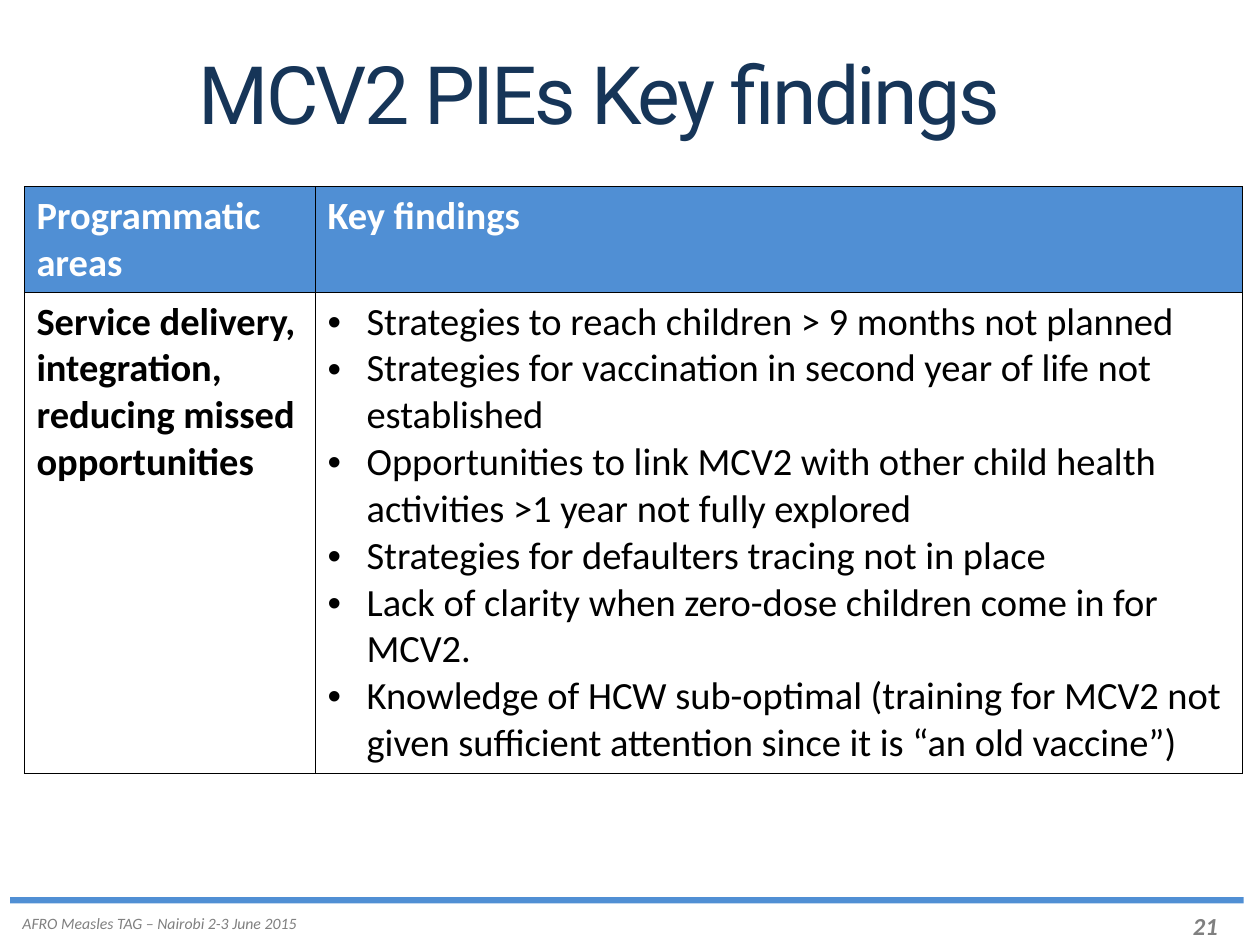
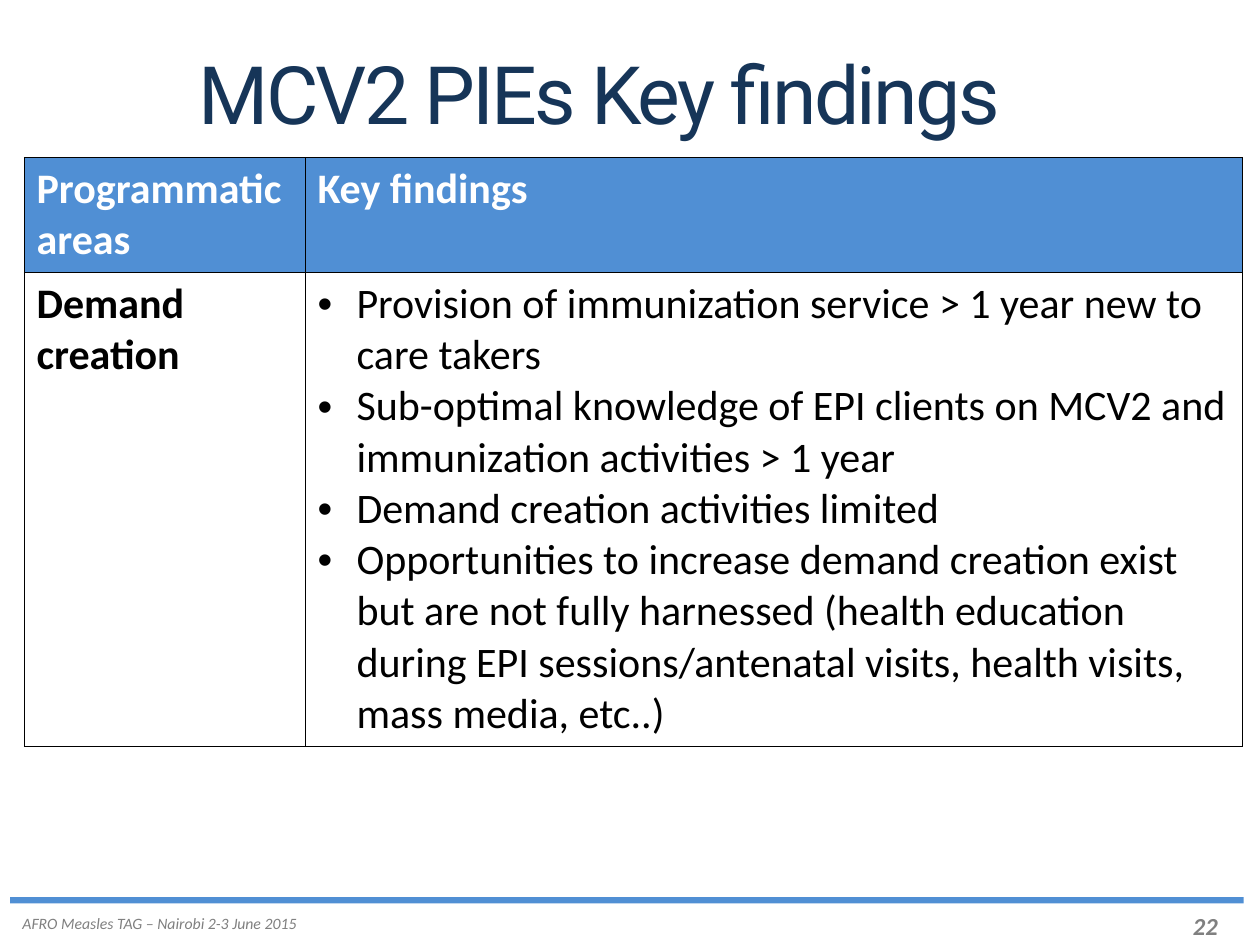
from dataclasses import dataclass

from lxml import etree
from pptx import Presentation
from pptx import util as u
from pptx.dml.color import RGBColor
from pptx.enum import shapes, text
from pptx.oxml import ns

BLUE, NAVY, GRAY, BLACK, WHITE = "508FD4", "163558", "808080", "000000", "FFFFFF"
TITLE = "MCV2 PIEs Key findings"
FOOTER = "AFRO Measles TAG – Nairobi 2-3 June 2015"
HEADERS = ("Programmatic areas", "Key findings")
FIRST_PAGE = 21
TABLE_LEFT, TABLE_WIDTH = 0.19, 9.67
INDENT = u.Inches(0.31)


@dataclass
class FindingsSlide:
    top: float
    area_width: float
    row_heights: tuple[float, float]
    size: int
    area: str
    findings: list[str]


SLIDES = [
    FindingsSlide(1.48, 2.31, (0.84, 3.82), 22,
                  "Service delivery, integration, reducing missed opportunities", [
        "Strategies to reach children > 9 months not planned",
        "Strategies for vaccination in second year of life not established",
        "Opportunities to link MCV2 with other child health activities >1 year not fully explored",
        "Strategies for defaulters tracing not in place",
        "Lack of clarity when zero-dose children come in for MCV2.",
        "Knowledge of HCW sub-optimal (training for MCV2 not given sufficient attention "
        "since it is “an old vaccine”)",
    ]),
    FindingsSlide(1.25, 2.23, (0.91, 3.76), 24, "Demand creation", [
        "Provision of immunization service > 1 year new to care takers",
        "Sub-optimal knowledge of EPI clients on MCV2 and immunization activities > 1 year",
        "Demand creation activities limited",
        "Opportunities to increase demand creation exist but are not fully harnessed "
        "(health education during EPI sessions/antenatal visits, health visits, mass media, etc..)",
    ]),
]


def color(value: str) -> RGBColor:
    return RGBColor.from_string(value)


def style(tf, size: float, fill: str, name: str = "Calibri",
          bold: bool = False, italic: bool = False) -> None:
    for p in tf.paragraphs:
        for r in p.runs:
            r.font.size = u.Pt(size)
            r.font.name = name
            r.font.color.rgb = color(fill)
            r.font.bold = bold
            r.font.italic = italic


def add_title(s) -> None:
    sp = s.shapes.title
    sp.left, sp.top = u.Inches(0.17), u.Inches(0.42)
    sp.width, sp.height = u.Inches(9.17), u.Inches(0.72)
    tf = sp.text_frame
    tf.text = TITLE
    tf.word_wrap = True
    tf.auto_size = text.MSO_AUTO_SIZE.NONE
    tf.vertical_anchor = text.MSO_ANCHOR.MIDDLE
    tf.margin_left = tf.margin_right = tf.margin_top = tf.margin_bottom = 0
    p = tf.paragraphs[0]
    p.alignment = text.PP_ALIGN.CENTER
    p.line_spacing = 0.9
    style(tf, 46, NAVY, "Roboto")
    p.runs[0].font._element.set("spc", "-150")


def add_label(s, label: str, left: float, top: float, width: float, height: float,
              size: float, bold: bool = False) -> None:
    sp = s.shapes.add_textbox(*map(u.Inches, (left, top, width, height)))
    tf = sp.text_frame
    tf.text = label
    tf.word_wrap = False
    style(tf, size, GRAY, bold=bold, italic=True)


def add_footer(s, page: int) -> None:
    add_label(s, str(page), 9.37, 7.18, 0.44, 0.34, 14, bold=True)
    add_label(s, FOOTER, 0.08, 7.2, 2.4, 0.25, 9)
    band = s.shapes.add_shape(shapes.MSO_SHAPE.RECTANGLE,
                              *map(u.Inches, (0.08, 7.12, 9.79, 0.05)))
    band.shadow.inherit = False
    band.fill.solid()
    band.fill.fore_color.rgb = color(BLUE)
    band.line.fill.background()


def add_borders(cell) -> None:
    tcPr = cell._tc.get_or_add_tcPr()
    for side in ("a:lnL", "a:lnR", "a:lnT", "a:lnB"):
        ln = etree.SubElement(tcPr, ns.qn(side), w=str(u.Pt(0.25)))
        fill = etree.SubElement(ln, ns.qn("a:solidFill"))
        etree.SubElement(fill, ns.qn("a:srgbClr"), val=BLACK)


def add_bullet(p) -> None:
    pPr = p._p.get_or_add_pPr()
    pPr.set("marL", str(INDENT))
    pPr.set("indent", str(-INDENT))
    etree.SubElement(pPr, ns.qn("a:buFont"), typeface="Arial")
    etree.SubElement(pPr, ns.qn("a:buChar"), char="•")


def fill_cell(cell, content: str, size: int, ink: str, back: str,
              bold: bool = True, bullets: bool = False) -> None:
    add_borders(cell)
    cell.fill.solid()
    cell.fill.fore_color.rgb = color(back)
    tf = cell.text_frame
    tf.text = content
    if bullets:
        for p in tf.paragraphs:
            add_bullet(p)
    style(tf, size, ink, bold=bold)


def add_findings(s, item: FindingsSlide) -> None:
    frame = s.shapes.add_table(2, 2, *map(u.Inches, (
        TABLE_LEFT, item.top, TABLE_WIDTH, sum(item.row_heights))))
    table = frame.table
    table.columns[0].width = u.Inches(item.area_width)
    table.columns[1].width = u.Inches(TABLE_WIDTH - item.area_width)
    for row, height in zip(table.rows, item.row_heights):
        row.height = u.Inches(height)
    for col, header in enumerate(HEADERS):
        fill_cell(table.cell(0, col), header, item.size, WHITE, BLUE)
    fill_cell(table.cell(1, 0), item.area, item.size, BLACK, WHITE)
    fill_cell(table.cell(1, 1), "\n".join(item.findings), item.size, BLACK, WHITE,
              bold=False, bullets=True)


def main() -> None:
    prs = Presentation()
    prs.slide_width, prs.slide_height = u.Inches(10), u.Inches(7.5)
    for page, item in enumerate(SLIDES, FIRST_PAGE):
        s = prs.slides.add_slide(prs.slide_layouts[5])
        add_footer(s, page)
        add_title(s)
        add_findings(s, item)
    prs.save("out.pptx")


if __name__ == "__main__":
    main()
